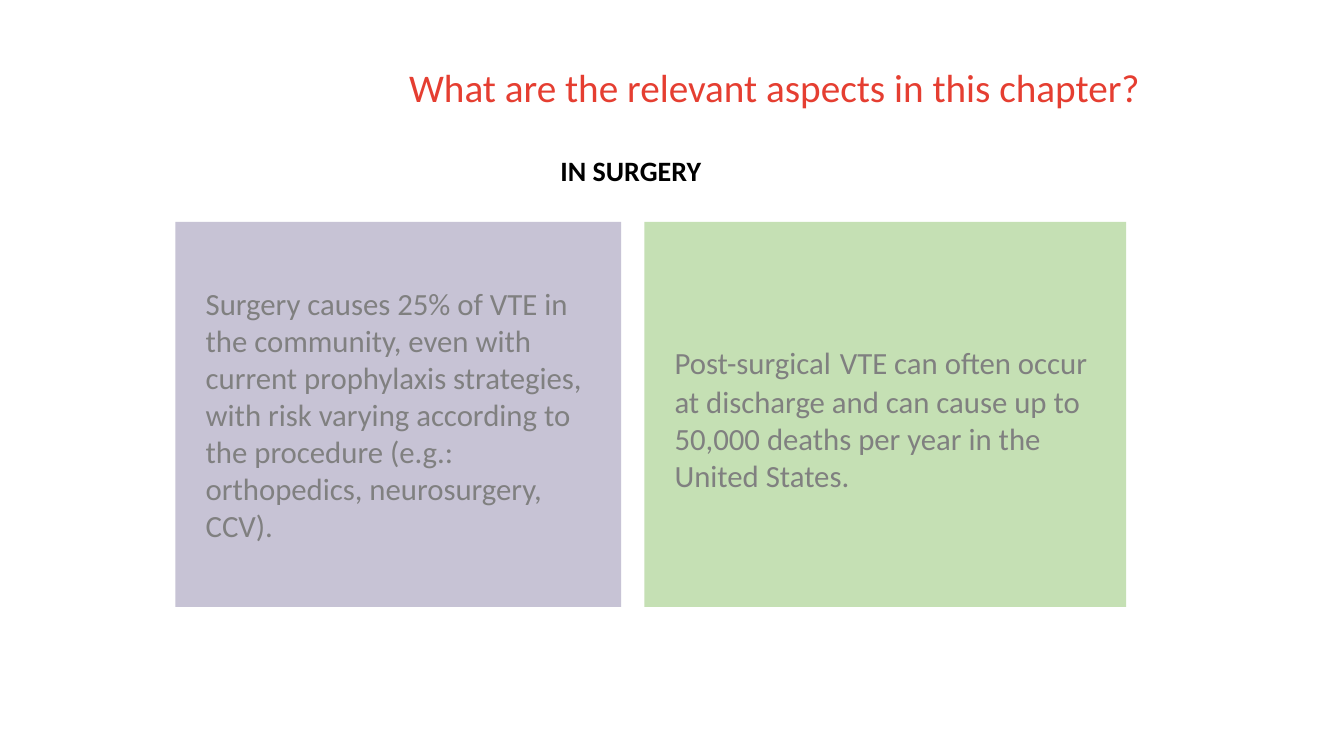
import pptx
import pptx.util
import pptx.dml.color
import pptx.enum.shapes
import pptx.enum.text

Inches = pptx.util.Inches
ANCHOR = pptx.enum.text.MSO_ANCHOR
COLORS = {
    "title": "E53E31",
    "heading": "000000",
    "body": "808080",
    "lavender": "C7C3D5",
    "green": "C5E0B4",
}
STYLES = {
    "title": {"size": 28, "bold": False},
    "heading": {"size": 20, "bold": True},
    "body": {"size": 22, "bold": False},
    "gap": {"size": 28, "bold": True},
}
PANEL_TOP, PANEL_HEIGHT = 2.2, 3.82
PANELS = [
    (1.74, 4.42, "lavender", [
        ("Surgery causes 25% of VTE in the community, even with current "
         "prophylaxis strategies, with risk varying according to the procedure "
         "(e.g.: orthopedics, neurosurgery, CCV).", "body"),
    ]),
    (6.39, 4.78, "green", [
        ("Post-surgical", "body"),
        (" ", "gap"),
        ("VTE can often occur at discharge and can cause up to 50,000 deaths "
         "per year in the United States.", "body"),
    ]),
]


def rgb(name):
    return pptx.dml.color.RGBColor.from_string(COLORS[name])


def write_runs(frame, runs, frame_format):
    for name, value in frame_format.items():
        setattr(frame, name, value)
    paragraph = frame.paragraphs[0]
    paragraph.alignment = pptx.enum.text.PP_ALIGN.LEFT
    for text, style in runs:
        run = paragraph.add_run()
        run.text = text
        run.font.name = "Calibri"
        run.font.size = pptx.util.Pt(STYLES[style]["size"])
        run.font.bold = STYLES[style]["bold"]
        run.font.color.rgb = rgb("heading" if style == "gap" else style)


def add_label(slide, box, text, style, wrap):
    shape = slide.shapes.add_textbox(*map(Inches, box))
    frame_format = {"word_wrap": wrap, "vertical_anchor": ANCHOR.TOP}
    write_runs(shape.text_frame, [(text, style)], frame_format)


def add_panel(slide, box, fill, runs):
    shape = slide.shapes.add_shape(
        pptx.enum.shapes.MSO_SHAPE.RECTANGLE, *map(Inches, box))
    shape.shadow.inherit = False
    shape.fill.solid()
    shape.fill.fore_color.rgb = rgb(fill)
    shape.line.fill.background()
    margins = {f"margin_{side}": Inches(0.3)
               for side in ("left", "top", "right", "bottom")}
    write_runs(shape.text_frame, runs,
               {"word_wrap": True, "vertical_anchor": ANCHOR.MIDDLE, **margins})


def main():
    presentation = pptx.Presentation()
    presentation.slide_width = Inches(13.33)
    presentation.slide_height = Inches(7.5)
    slide = presentation.slides.add_slide(presentation.slide_layouts[6])
    add_label(slide, (3.96, 0.58, 9.3, 0.78),
              "What are the relevant aspects in this chapter?", "title", True)
    for left, width, fill, runs in PANELS:
        add_panel(slide, (left, PANEL_TOP, width, PANEL_HEIGHT), fill, runs)
    add_label(slide, (5.46, 1.47, 1.61, 0.44), "IN SURGERY", "heading", False)
    presentation.save("out.pptx")


if __name__ == "__main__":
    main()
